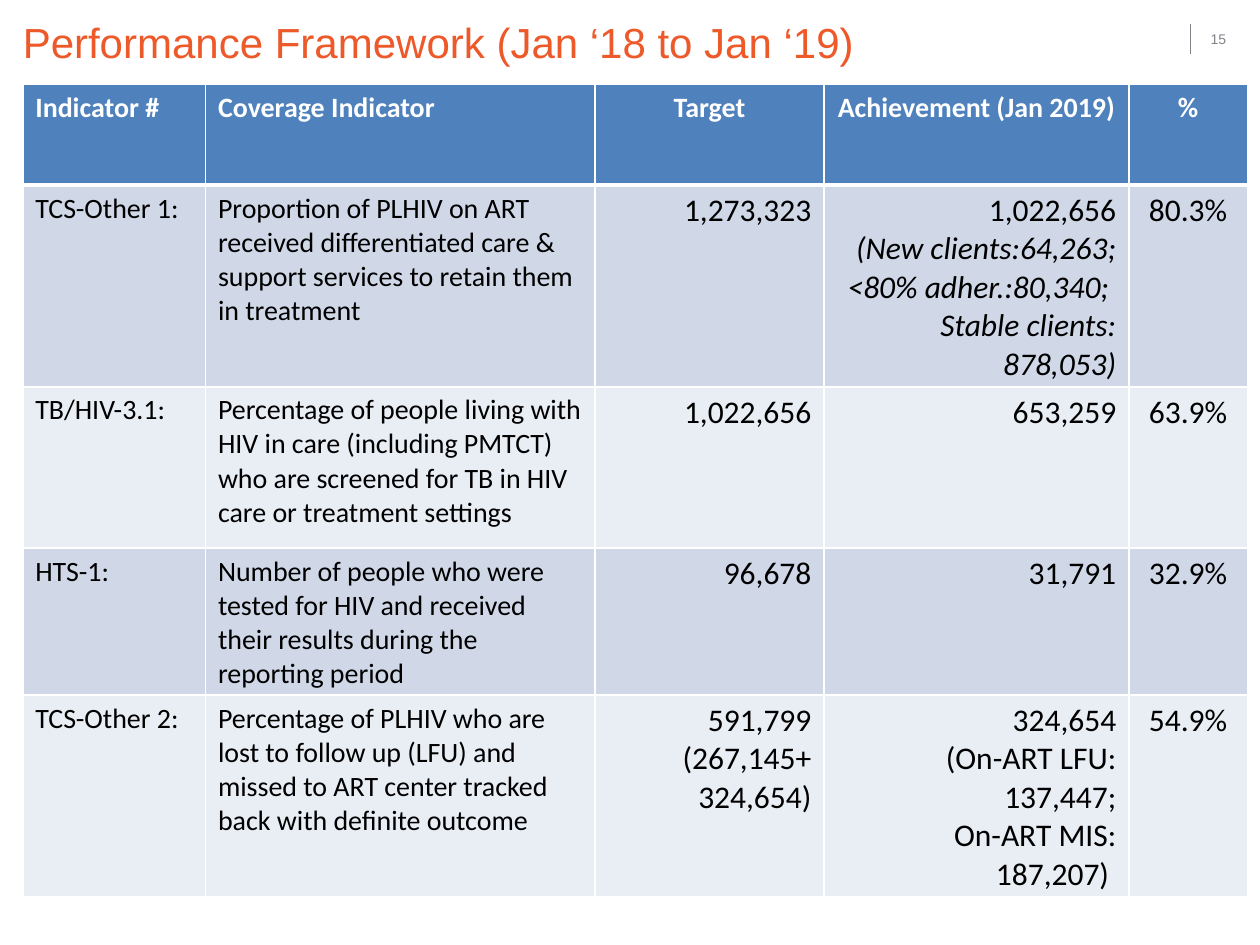
from dataclasses import dataclass
from typing import Any

from lxml import etree
from pptx import Presentation
from pptx import util as u
from pptx.dml import color
from pptx.enum import shapes, text
from pptx.oxml import ns

LEFT, CENTER, RIGHT = text.PP_ALIGN.LEFT, text.PP_ALIGN.CENTER, text.PP_ALIGN.RIGHT
COLUMN_WIDTHS = [104.4, 222.5, 131, 174.2, 67.7]
ROW_HEIGHTS = [57.6, 74.9, 92.2, 74.9, 99.4]
HEADINGS = ["Indicator #", "Coverage Indicator", "Target", "Achievement (Jan 2019)", "%"]
HEADING_ALIGNS = [LEFT, LEFT, CENTER, CENTER, CENTER]
BODY_ALIGNS = [LEFT, LEFT, RIGHT, RIGHT, CENTER]
BODY_SIZES = [16, 16, 18, 18, 18]
INDICATORS = [
    ["TCS-Other 1:",
     "Proportion of PLHIV on ART received differentiated care & support services "
     "to retain them in treatment",
     "1,273,323",
     "1,022,656\n(New clients:64,263; <80% adher.:80,340; \nStable clients: 878,053)",
     "80.3%"],
    ["TB/HIV-3.1:",
     "Percentage of people living with HIV in care (including PMTCT) who are screened "
     "for TB in HIV care or treatment settings",
     "1,022,656", "653,259", "63.9%"],
    ["HTS-1:",
     "Number of people who were tested for HIV and received their results during the "
     "reporting period",
     "96,678", "31,791", "32.9%"],
    ["TCS-Other 2:",
     "Percentage of PLHIV who are lost to follow up (LFU) and missed to ART center "
     "tracked back with definite outcome",
     "591,799\n(267,145+ 324,654)",
     "324,654\n(On-ART LFU: 137,447;\nOn-ART MIS: 187,207) ",
     "54.9%"],
]
ITALIC_LINES = INDICATORS[0][3].split("\n")[1:]


def rgb(value):
    return color.RGBColor.from_string(value)


@dataclass
class SlideBuilder:
    """Hold the style and the current slide, and draw each kind of element."""

    page: Any
    title_color: str = "ED5929"
    muted: str = "80838A"
    header_fill: str = "4F81BD"
    band_fills: tuple = ("D0D8E8", "E9EDF4")
    title_font: str = "Arial"
    table_font: str = "Calibri"

    def add_lines(self, frame, lines, size, font, ink, align=LEFT, bold=False):
        for index, line in enumerate(lines):
            para = frame.add_paragraph() if index else frame.paragraphs[0]
            para.alignment = align
            span = para.add_run()
            span.text = line
            span.font.size = u.Pt(size)
            span.font.name = font
            span.font.bold = bold
            span.font.italic = line in ITALIC_LINES
            span.font.color.rgb = rgb(ink)

    def label(self, area, words, size, ink, anchor=text.MSO_ANCHOR.TOP, inset=None):
        box = self.page.shapes.add_textbox(*map(u.Pt, area))
        frame = box.text_frame
        frame.word_wrap = True
        frame.vertical_anchor = anchor
        if inset is not None:
            frame.margin_left = frame.margin_right = u.Pt(inset)
            frame.margin_top = frame.margin_bottom = u.Pt(inset)
        self.add_lines(frame, [words], size, self.title_font, ink)

    def line(self, start, end, ink, width):
        rule = self.page.shapes.add_connector(
            shapes.MSO_CONNECTOR.STRAIGHT, *map(u.Pt, start + end))
        rule.line.color.rgb = rgb(ink)
        rule.line.width = u.Pt(width)
        etree.SubElement(rule._element.spPr, ns.qn("a:effectLst"))

    def borders(self, cell, bottom, top):
        properties = cell._tc.get_or_add_tcPr()
        for side, width in (("L", 1), ("R", 1), ("T", top), ("B", bottom)):
            edge = etree.SubElement(properties, ns.qn(f"a:ln{side}"), w=str(u.Pt(width)))
            solid = etree.SubElement(edge, ns.qn("a:solidFill"))
            etree.SubElement(solid, ns.qn("a:srgbClr"), val="FFFFFF")

    def table(self, left, top, rows):
        area = map(u.Pt, (left, top, sum(COLUMN_WIDTHS), sum(ROW_HEIGHTS)))
        grid = self.page.shapes.add_table(len(rows), len(COLUMN_WIDTHS), *area).table
        for column, width in zip(grid.columns, COLUMN_WIDTHS):
            column.width = u.Pt(width)
        for r, (row, height) in enumerate(zip(rows, ROW_HEIGHTS)):
            grid.rows[r].height = u.Pt(height)
            header = r == 0
            fill = self.header_fill if header else self.band_fills[(r - 1) % 2]
            for c, words in enumerate(row):
                cell = grid.cell(r, c)
                self.borders(cell, bottom=3 if header else 1, top=3 if r == 1 else 1)
                cell.fill.solid()
                cell.fill.fore_color.rgb = rgb(fill)
                self.add_lines(cell.text_frame, words.split("\n"),
                               16 if header else BODY_SIZES[c], self.table_font,
                               "FFFFFF" if header else "000000",
                               (HEADING_ALIGNS if header else BODY_ALIGNS)[c], header)


def main():
    deck = Presentation()
    deck.slide_width, deck.slide_height = u.Pt(720), u.Pt(540)
    slide = SlideBuilder(deck.slides.add_slide(deck.slide_layouts[6]))
    slide.label((684.7, 13.7, 28, 17.3), "15", 8, slide.muted)
    slide.line((680.4, 13.7), (680.4, 31), slide.muted, 0.75)
    slide.label((13, 9.4, 614, 28.8), "Performance Framework (Jan ‘18 to Jan ‘19)",
                24, slide.title_color, text.MSO_ANCHOR.BOTTOM, inset=0)
    slide.table(13, 48.2, [HEADINGS] + INDICATORS)
    deck.save("out.pptx")


if __name__ == "__main__":
    main()
